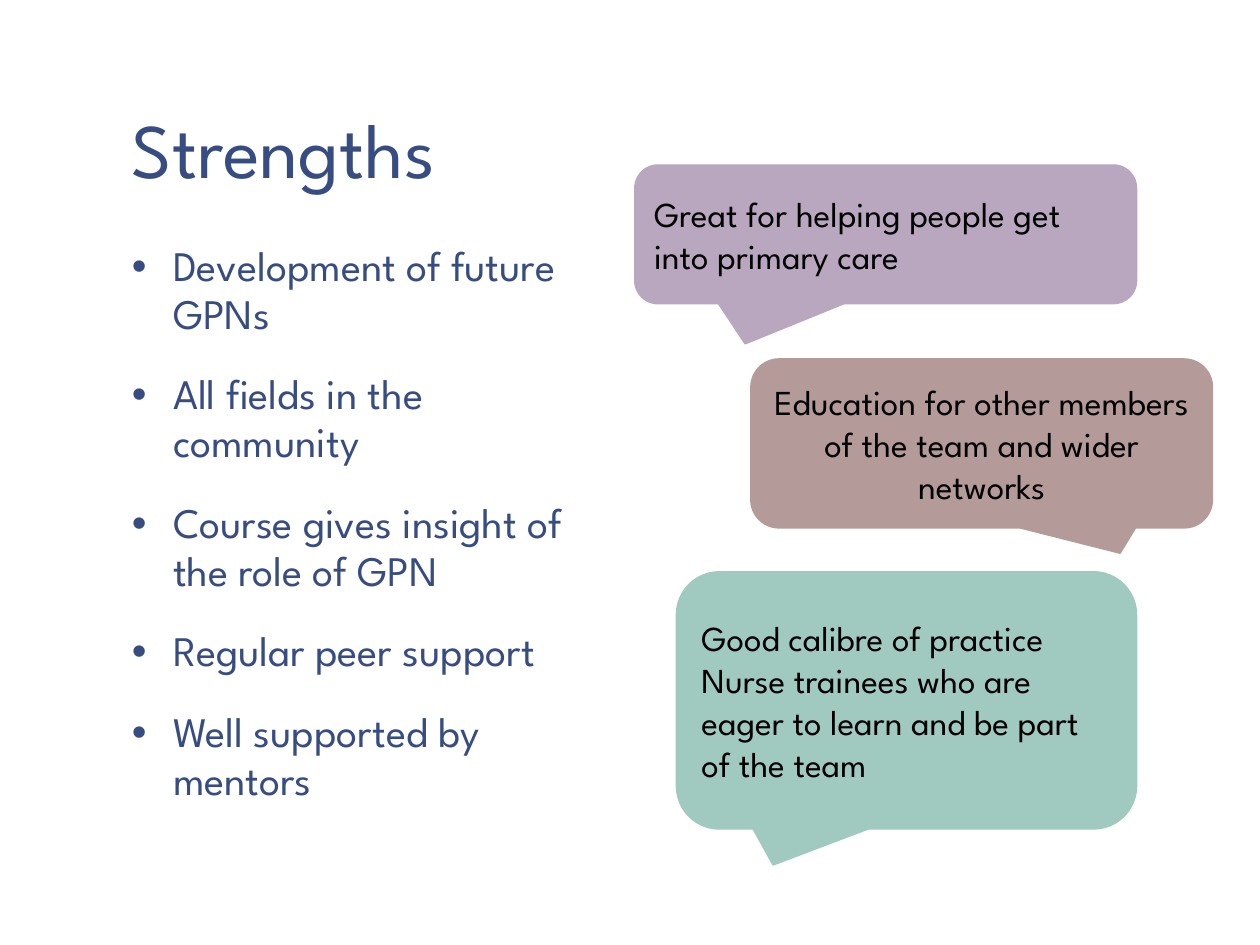
from lxml import etree
from pptx import Presentation
from pptx.dml.color import RGBColor
from pptx.enum.shapes import MSO_SHAPE
from pptx.enum.text import MSO_ANCHOR, PP_ALIGN
from pptx.oxml.ns import qn
from pptx.util import Cm, Pt

CALLOUT = MSO_SHAPE.ROUNDED_RECTANGULAR_CALLOUT
BOTTOM, MIDDLE, TOP = MSO_ANCHOR.BOTTOM, MSO_ANCHOR.MIDDLE, MSO_ANCHOR.TOP
LEFT, CENTER = PP_ALIGN.LEFT, PP_ALIGN.CENTER
FONT = "League Spartan"
COLORS = {
    "background": "FFFFFF",
    "heading": "374C81",
    "quote": "000000",
    "purple": "B9A6BF",
    "brown": "B59A9A",
    "green": "A0CAC0",
}


def style_font(paragraph, size, color):
    paragraph.font.name = FONT
    paragraph.font.size = Pt(size)
    paragraph.font.color.rgb = RGBColor.from_string(COLORS[color])


def add_text_frame(top, width, height, anchor):
    box = slide.shapes.add_textbox(Cm(2.34), Cm(top), Cm(width), Cm(height))
    frame = box.text_frame
    frame.word_wrap = True
    frame.vertical_anchor = anchor
    frame.margin_left = frame.margin_right = Cm(0.32)
    frame.margin_top = frame.margin_bottom = Cm(0.18)
    return frame


presentation = Presentation()
presentation.slide_width = Cm(25.4)
presentation.slide_height = Cm(19.05)
slide = presentation.slides.add_slide(presentation.slide_layouts[6])
slide.background.fill.solid()
slide.background.fill.fore_color.rgb = RGBColor.from_string(COLORS["background"])

# Title
title = add_text_frame(0.2, 21.16, 3.89, BOTTOM).paragraphs[0]
title.text = "Strengths"
title.line_spacing = 0.85
style_font(title, 44, "heading")

# Bulleted strengths
strengths = [
    "Development of future GPNs",
    "All fields in the community",
    "Course gives insight of the role of GPN",
    "Regular peer support",
    "Well supported by mentors",
]
body = add_text_frame(4.72, 10.36, 12.42, TOP)
for index, strength in enumerate(strengths):
    paragraph = body.add_paragraph() if index else body.paragraphs[0]
    paragraph.text = strength
    paragraph.line_spacing = 0.95
    paragraph.space_before = Pt(18.7 if index else 0)
    properties = paragraph._p.get_or_add_pPr()
    properties.set("marL", str(Cm(0.83)))
    properties.set("indent", str(-Cm(0.83)))
    etree.SubElement(properties, qn("a:buFont"), typeface="Arial")
    etree.SubElement(properties, qn("a:buChar"), char="•")
    style_font(paragraph, 24, "heading")

# Quote callouts: text, left, top, width, height, pointer tip, colour, alignment
quotes = [
    ("Great for helping people get into primary care",
     12.8, 3.33, 10.11, 2.79, (-0.28, 0.79), "purple", LEFT),
    ("Education for other members of the team and wider networks",
     15.14, 7.24, 9.3, 3.4, (0.3, 0.65), "brown", CENTER),
    ("Good calibre of practice Nurse trainees who are eager to learn "
     "and be part of the team",
     13.64, 11.53, 9.27, 5.18, (-0.29, 0.64), "green", LEFT),
]
for text, left, top, width, height, tip, color, alignment in quotes:
    callout = slide.shapes.add_shape(CALLOUT, Cm(left), Cm(top), Cm(width), Cm(height))
    callout.shadow.inherit = False
    callout.adjustments[0], callout.adjustments[1] = tip
    callout.fill.solid()
    callout.fill.fore_color.rgb = RGBColor.from_string(COLORS[color])
    callout.line.color.rgb = RGBColor.from_string(COLORS[color])
    callout.line.width = Pt(1)
    callout.text_frame.word_wrap = True
    callout.text_frame.vertical_anchor = MIDDLE
    paragraph = callout.text_frame.paragraphs[0]
    paragraph.text = text
    paragraph.alignment = alignment
    style_font(paragraph, 20, "quote")

presentation.save("out.pptx")
